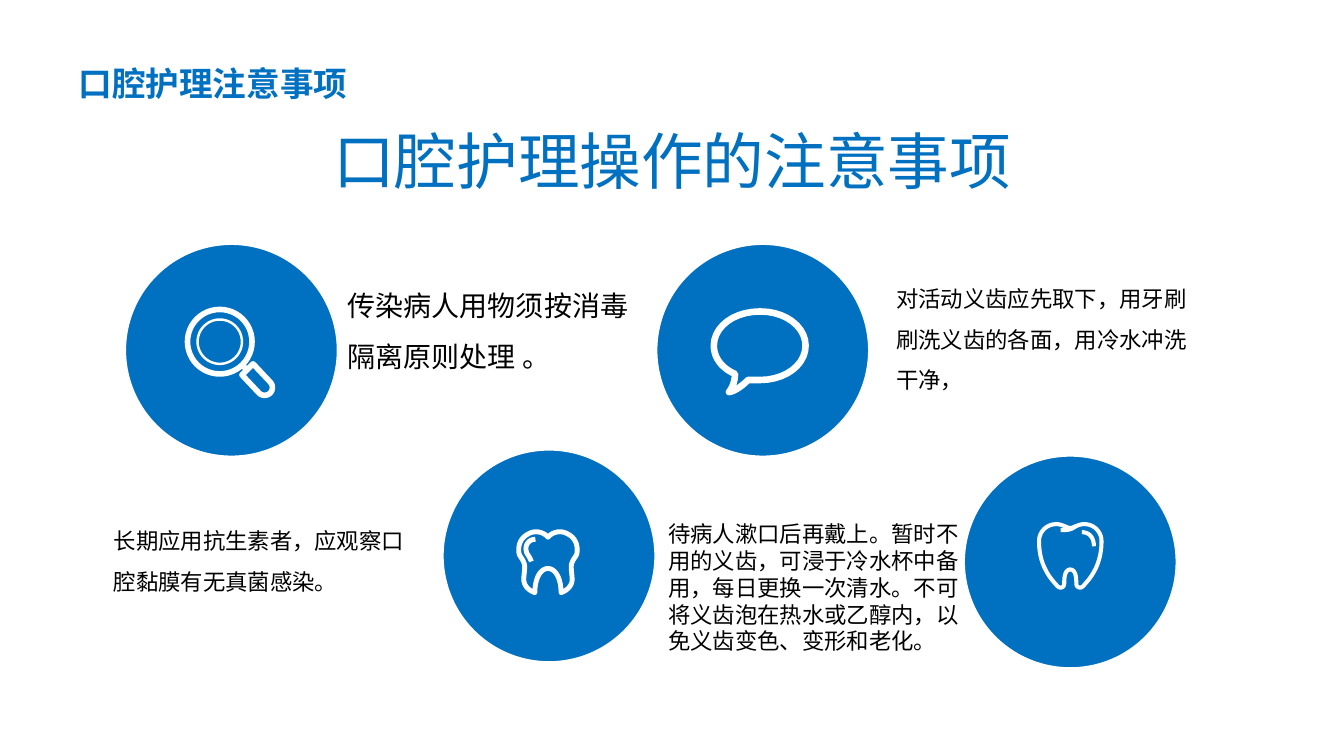
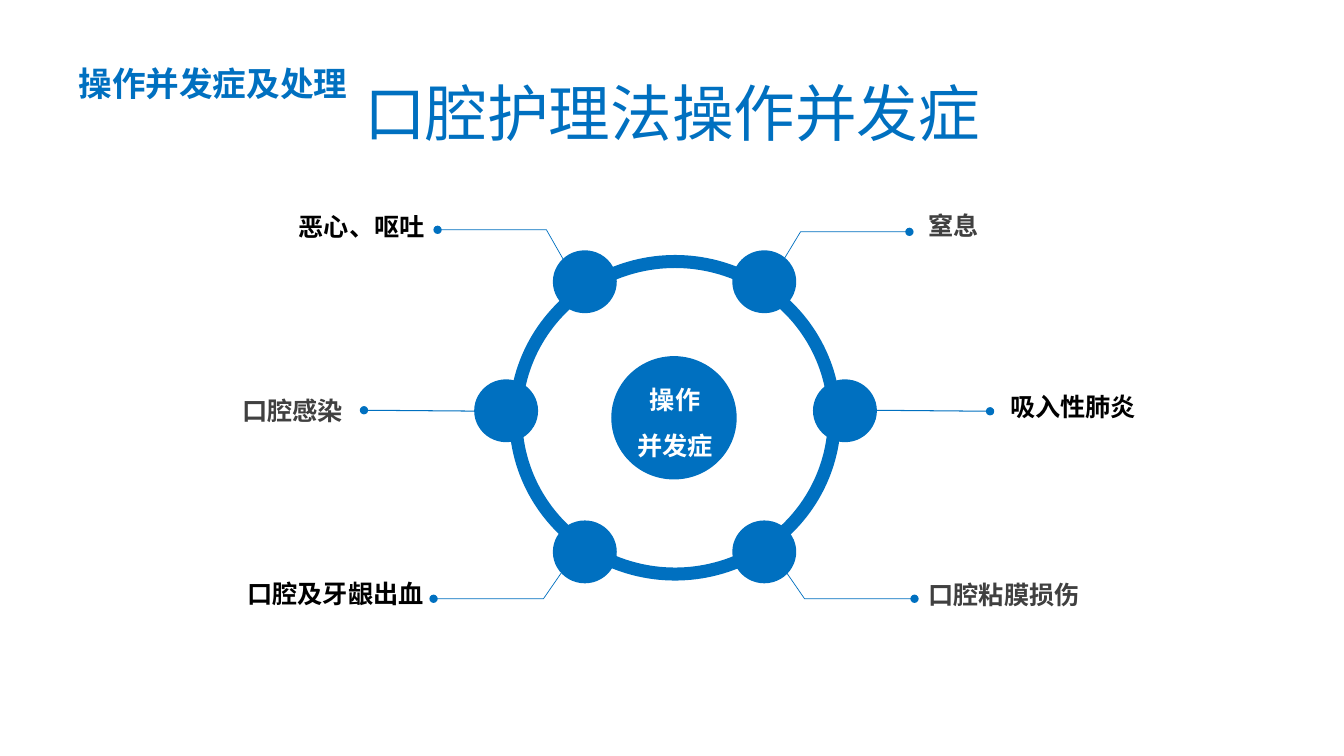
from lxml import etree
from pptx import Presentation
from pptx.dml.color import RGBColor
from pptx.enum.shapes import MSO_CONNECTOR, MSO_SHAPE
from pptx.enum.text import MSO_ANCHOR, PP_ALIGN
from pptx.oxml.ns import qn
from pptx.util import Inches, Pt

BLUE = RGBColor(0x00, 0x70, 0xC0)
WHITE = RGBColor(0xFF, 0xFF, 0xFF)
BLACK = RGBColor(0x00, 0x00, 0x00)
GREY = RGBColor(0x40, 0x40, 0x40)
OVAL, DONUT = MSO_SHAPE.OVAL, MSO_SHAPE.DONUT
STRAIGHT = MSO_CONNECTOR.STRAIGHT
LEFT, MID, RIGHT = PP_ALIGN.LEFT, PP_ALIGN.CENTER, PP_ALIGN.RIGHT
TOP, CENTRE = MSO_ANCHOR.TOP, MSO_ANCHOR.MIDDLE
HEAD_FONT, SANS, SERIF = "Noto Sans CJK SC", "Roboto", "Times New Roman"

# Slide 1: text, box, size, line spacing
NOTES = [
    ("传染病人用物须按消毒隔离原则处理 。", (3.35, 2.65, 3.15, 1.05), 20, 1.5),
    ("对活动义齿应先取下，用牙刷刷洗义齿的各面，用冷水冲洗干净，",
     (8.79, 2.65, 3.15, 1.26), 16, 1.5),
    ("长期应用抗生素者，应观察口腔黏膜有无真菌感染。",
     (1.03, 5.05, 3.15, 0.86), 16, 1.5),
    ("待病人漱口后再戴上。暂时不用的义齿，可浸于冷水杯中备用，每日更换一次清水。"
     "不可将义齿泡在热水或乙醇内，以免义齿变色、变形和老化。",
     (6.53, 5.11, 3.15, 1.45), 16, 1),
]
DISC = 2.11
DISCS = [(1.24, 2.42), (4.39, 4.46), (6.51, 2.42), (9.56, 4.52)]

# Icon strokes in hundredths of an inch: a start, then Bezier triples
LENS = (2.18, 3.39)
RINGS = [(0.32, 4), (0.22, 1.75)]  # radius, line width
GRIP = [(240, 372), (240, 372), (257, 390), (257, 390),
        (260, 393), (265, 393), (268, 390), (271, 387), (271, 382), (268, 379),
        (268, 379), (251, 361), (251, 361), (251, 361), (240, 372), (240, 372)]
NECK = [(239, 361), (239, 361), (245, 367), (245, 367)]
BUBBLE = [(742, 377), (746, 377), (750, 377), (754, 377),
          (779, 377), (799, 362), (799, 343), (799, 324), (779, 309), (754, 309),
          (728, 309), (708, 324), (708, 343), (708, 354), (715, 365), (729, 371),
          (729, 379), (726, 385), (723, 389), (730, 388), (738, 381), (742, 377)]
# Right halves of the teeth, x measured from the axis
MOLAR = [(0, 533), (5, 527), (14, 526), (20, 530), (26, 533), (29, 539), (29, 545),
         (29, 547), (29, 549), (28, 551), (27, 553), (25, 555), (24, 558),
         (22, 561), (24, 570), (24, 575), (24, 581), (19, 586), (13, 588),
         (13, 573), (7, 564), (0, 564)]
TOOTH = [(0, 524), (5, 523), (8, 520), (14, 520), (23, 520), (31, 527), (31, 537),
         (31, 553), (26, 567), (15, 579), (14, 580), (12, 583), (10, 583),
         (7, 583), (6, 581), (6, 579), (6, 575), (6, 565), (0, 565)]
SHINE = [(531, 535), (522, 535), (217 + 302, 545), (524, 551),
         (525, 553), (526, 554), (527, 557)]
FOLD = [(1052, 526), (1058, 526), (1062, 526), (1067, 522)]
GLOSS = [(1073, 528), (1080, 528), (1085, 533), (1085, 542)]

# Slide 2: label, box, align, colour, node corner, leader points from node out
NODE_W, NODE_H = 0.62, 0.61
NODES = [
    ("恶心、呕吐", (2.44, 2.05, 1.87, 0.4), RIGHT, BLACK, (5.49, 2.49),
     [(5.71, 2.79), (5.42, 2.28), (4.34, 2.28)]),
    ("窒息", (9.11, 2.04, 2.31, 0.4), LEFT, GREY, (7.27, 2.49),
     [(7.65, 2.78), (7.94, 2.3), (9.02, 2.3)]),
    ("口腔感染", (1.63, 3.87, 1.87, 0.4), RIGHT, GREY, (4.71, 3.77),
     [(4.92, 4.08), (3.61, 4.07)]),
    ("吸入性肺炎", (9.92, 3.83, 1.5, 0.4), LEFT, BLACK, (8.07, 3.77),
     [(8.63, 4.07), (9.82, 4.08)]),
    ("口腔及牙龈出血", (2.04, 5.69, 2.26, 0.4), RIGHT, BLACK, (5.49, 5.17),
     [(5.68, 5.52), (5.39, 5.94), (4.3, 5.94)]),
    ("口腔粘膜损伤", (9.11, 5.7, 2.31, 0.41), LEFT, GREY, (7.27, 5.17),
     [(7.69, 5.52), (7.98, 5.94), (9.07, 5.94)]),
]


def text(slide, box, lines, size, color, face, bold=False, align=LEFT,
         space=1, anchor=TOP, wrap=True):
    frame = slide.shapes.add_textbox(*map(Inches, box)).text_frame
    frame.word_wrap = wrap
    frame.vertical_anchor = anchor
    frame.text = lines
    for para in frame.paragraphs:
        para.alignment = align
        para.line_spacing = float(space)
        font = para.font
        font.size, font.bold, font.name = Pt(size), bold, face
        font.color.rgb = color


def paint(shape, fill, line, width):
    shape.shadow.inherit = False
    if fill is None:
        shape.fill.background()
    else:
        shape.fill.solid()
        shape.fill.fore_color.rgb = fill
    if line is None:
        shape.line.fill.background()
    else:
        shape.line.color.rgb = line
        shape.line.width = Pt(width)


def solid(slide, kind, box, fill, line=None, width=1):
    shape = slide.shapes.add_shape(kind, *map(Inches, box))
    paint(shape, fill, line, width)
    return shape


def trace(slide, points, color, width, close=False):
    """Draw an unfilled outline through points given in inches."""
    dots = [(Inches(x), Inches(y)) for x, y in points]
    pen = slide.shapes.build_freeform(*dots[0])
    pen.add_line_segments(dots[1:], close=close)
    shape = pen.convert_to_shape()
    paint(shape, None, color, width)
    return shape


def curve(knots, steps=10):
    """Sample a chain of cubic Beziers, turning hundredths into inches."""
    dots = [knots[0]]
    for i in range(0, len(knots) - 1, 3):
        quad = knots[i:i + 4]
        for n in range(1, steps + 1):
            t = n / steps
            mix = ((1 - t) ** 3, 3 * t * (1 - t) ** 2, 3 * t * t * (1 - t), t ** 3)
            dots.append(tuple(sum(m * p[k] for m, p in zip(mix, quad))
                              for k in (0, 1)))
    return [(x / 100, y / 100) for x, y in dots]


def mirror(half, axis):
    """Complete a half outline with its reflection."""
    right = [(axis + x, y) for x, y in half]
    left = [(axis - x, y) for x, y in half]
    return right + left[-2::-1]


def leader(slide, points):
    if len(points) == 2:
        (x1, y1), (x2, y2) = points
        line = slide.shapes.add_connector(
            STRAIGHT, Inches(x1), Inches(y1), Inches(x2), Inches(y2))
        line.line.color.rgb = BLUE
        line.line.width = Pt(0.75)
        etree.SubElement(line._element.spPr, qn("a:effectLst"))
    else:
        line = trace(slide, points, BLUE, 0.5)
    etree.SubElement(line.line._get_or_add_ln(), qn("a:tailEnd"), type="oval")


def page(deck, head, title, top):
    slide = deck.slides.add_slide(deck.slide_layouts[6])
    text(slide, (0.68, 0.37, 2.89, 0.65), head, 24, BLUE, HEAD_FONT, True,
         space=1.5, wrap=False)
    text(slide, (2.42, top, 8.5, 0.64), title, 44, BLUE, SANS,
         align=MID, space=0.9, anchor=CENTRE)
    return slide


def care(deck):
    slide = page(deck, "口腔护理注意事项", "口腔护理操作的注意事项", 1.31)
    for x, y in DISCS:
        solid(slide, OVAL, (x, y, DISC, DISC), BLUE, WHITE, 1.5)
    for words, box, size, space in NOTES:
        text(slide, box, words, size, BLACK, SERIF, space=space)
    for r, width in RINGS:
        box = (LENS[0] - r, LENS[1] - r, 2 * r, 2 * r)
        solid(slide, OVAL, box, None, WHITE, width)
    strokes = [(GRIP, 4, True), (NECK, 4, False), (BUBBLE, 4.7, True),
               (mirror(MOLAR, 543.5), 3.5, True), (SHINE, 3.5, False),
               (mirror(TOOTH, 1061.5), 2.9, True), (FOLD, 2.9, False),
               (GLOSS, 2.9, False)]
    for knots, width, close in strokes:
        trace(slide, curve(knots), WHITE, width, close)


def risks(deck):
    slide = page(deck, "操作并发症及处理", "口腔护理法操作并发症", 0.84)
    for *_, points in NODES:
        leader(slide, points)
    ring = solid(slide, DONUT, (5.05, 2.53, 3.29, 3.23), BLUE)
    ring.adjustments[0] = 0.04
    solid(slide, OVAL, (6.07, 3.54, 1.23, 1.21), BLUE, BLUE)
    text(slide, (5.8, 3.63, 1.79, 0.97), "操作\n并发症", 18, WHITE, SANS, True,
         MID, 1.5, CENTRE)
    for label, box, align, color, spot, _ in NODES:
        solid(slide, OVAL, (*spot, NODE_W, NODE_H), BLUE, BLUE)
        text(slide, box, label, 18, color, SANS, True, align)


def main():
    deck = Presentation()
    deck.slide_width, deck.slide_height = Inches(13.33), Inches(7.5)
    care(deck)
    risks(deck)
    deck.save("out.pptx")


if __name__ == "__main__":
    main()
